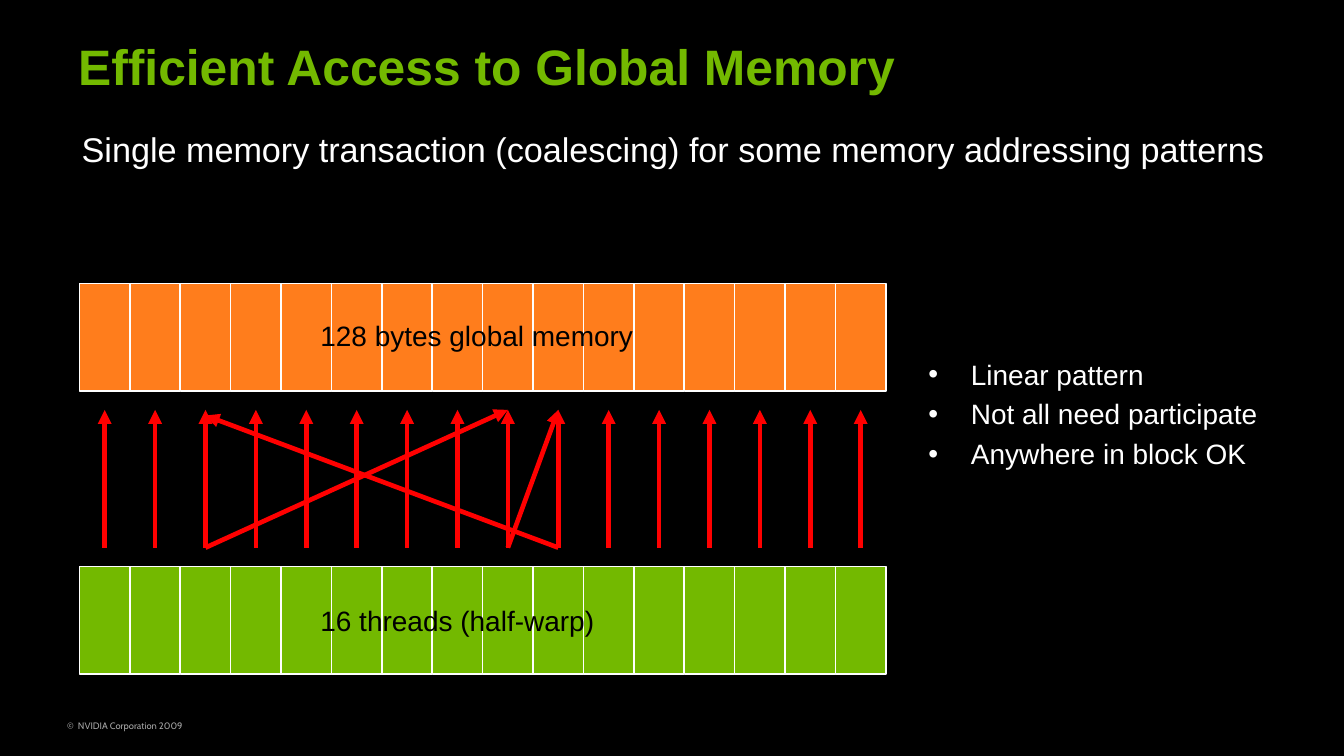
from pptx import Presentation, util as u
from pptx.dml.color import RGBColor
from pptx.enum import shapes, text
from pptx.oxml.ns import qn
from lxml import etree

HUES = {"back": "000000", "green": "73B900", "orange": "FF7D1C",
        "white": "FFFFFF", "black": "000000", "red": "FF0000", "gray": "A6A6A6"}

WIDE = (0.1, 0.05)
SLIM = (0.07, 0.03)
LABELS = [
    ("©  NVIDIA Corporation 2009", (0.5, 6.38, 2.25, 0.2), 6, "gray", "Cabin", False, WIDE),
    ("Efficient Access to Global Memory", (0.6, 0.27, 10.07, 0.63), 32, "green", "Arial", True, WIDE),
    ("Single memory transaction (coalescing) for some memory addressing patterns",
     (0.66, 1.12, 10.84, 0.44), 22, "white", "Arial", False, SLIM),
]
BANDS = [
    ("128 bytes global memory", 2.53, 2.81, "orange"),
    ("16 threads (half-warp)", 5.06, 5.36, "green"),
]
POINTS = ["Linear pattern", "Not all need participate", "Anywhere in block OK"]
COUNT, LEFT, CELL, TALL = 16, 0.71, 0.45, 0.96
TOP, BASE = 3.66, 4.89
CROSSED = [(2, 8, TOP), (8, 9, TOP), (9, 2, 3.71)]


def paint(hue):
    return RGBColor.from_string(HUES[hue])


def add_run(para, words, size, hue, font="Arial", bold=False):
    run = para.add_run()
    run.text = words
    run.font.size = u.Pt(size)
    run.font.name = font
    run.font.bold = bold
    run.font.color.rgb = paint(hue)


def add_box(slide, area, inset=WIDE, wrap=True):
    frame = slide.shapes.add_textbox(*map(u.Inches, area)).text_frame
    frame.word_wrap = wrap
    frame.margin_left = frame.margin_right = u.Inches(inset[0])
    frame.margin_top = frame.margin_bottom = u.Inches(inset[1])
    frame.vertical_anchor = text.MSO_ANCHOR.TOP
    return frame


def add_label(slide, words, area, size, hue, font="Arial", bold=False, inset=SLIM):
    frame = add_box(slide, area, inset, size != 22)
    add_run(frame.paragraphs[0], words, size, hue, font, bold)


def add_band(slide, top, hue):
    group = slide.shapes.add_group_shape()
    for i in range(COUNT):
        area = (LEFT + i * CELL, top, CELL, TALL)
        cell = group.shapes.add_shape(shapes.MSO_SHAPE.RECTANGLE, *map(u.Inches, area))
        cell.shadow.inherit = False
        cell.fill.solid()
        cell.fill.fore_color.rgb = paint(hue)
        cell.line.color.rgb = paint("white")
        cell.line.width = u.Pt(1)


def add_arrow(slide, start, end, top=TOP):
    ends = [LEFT + (i + 0.5) * CELL for i in (start, end)]
    line = slide.shapes.add_connector(
        shapes.MSO_CONNECTOR.STRAIGHT,
        *map(u.Inches, (ends[0], BASE, ends[1], top)))
    line.line.color.rgb = paint("red")
    line.line.width = u.Pt(3)
    etree.SubElement(line.line._get_or_add_ln(), qn("a:tailEnd"), type="triangle")
    etree.SubElement(line._element.spPr, qn("a:effectLst"))


def add_list(slide):
    frame = add_box(slide, (8.19, 3.14, 3.59, 1.64))
    for i, words in enumerate(POINTS):
        para = frame.add_paragraph() if i else frame.paragraphs[0]
        props = para._p.get_or_add_pPr()
        props.set("marL", str(u.Inches(0.38)))
        props.set("indent", str(u.Inches(-0.38)))
        if i:
            para.space_before = u.Pt(4)
        etree.SubElement(props, qn("a:buFont"), typeface="Arial")
        etree.SubElement(props, qn("a:buChar"), char="•")
        add_run(para, words, 18, "white")


def main():
    deck = Presentation()
    deck.slide_width, deck.slide_height = u.Inches(12), u.Inches(6.75)
    slide = deck.slides.add_slide(deck.slide_layouts[6])
    slide.background.fill.solid()
    slide.background.fill.fore_color.rgb = paint("back")
    for label in LABELS:
        add_label(slide, *label)
    for words, top, mid, hue in BANDS:
        add_band(slide, top, hue)
        add_label(slide, words, (2.79, mid, 3.09, 0.37), 18, "black")
    for i in range(COUNT):
        add_arrow(slide, i, i)
    for start, end, top in CROSSED:
        add_arrow(slide, start, end, top)
    add_list(slide)
    deck.save("out.pptx")


if __name__ == "__main__":
    main()
